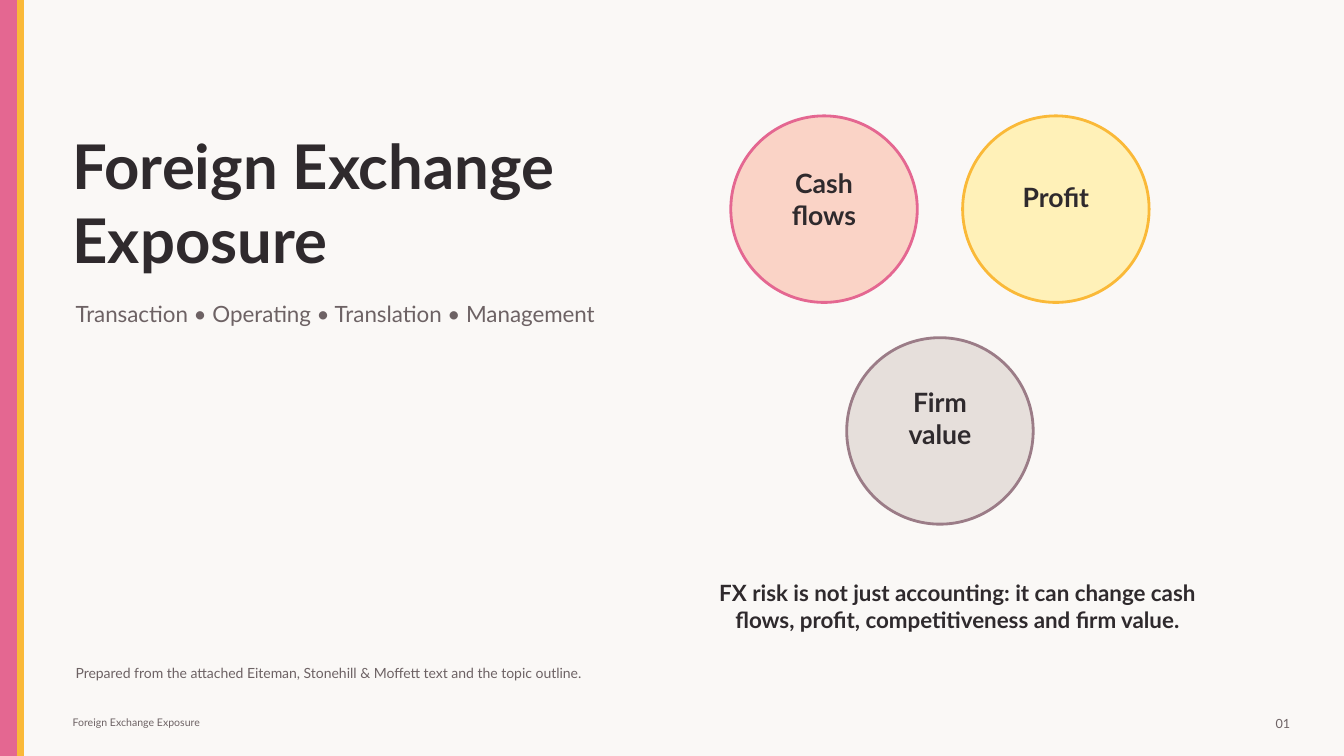
from dataclasses import dataclass

from pptx import Presentation
from pptx.dml.color import RGBColor
from pptx.enum import shapes, text
from pptx.util import Pt


@dataclass(frozen=True)
class Theme:
    font: str = "Lato"
    paper: str = "FAF8F6"
    ink: str = "2F2A2D"
    muted: str = "6D6264"
    pink: str = "E46791"
    pale_pink: str = "FAD3C6"
    amber: str = "FAB938"
    pale_amber: str = "FFF1B8"
    mauve: str = "9B7C87"
    pale_mauve: str = "E6DFDB"
    title: float = 44
    label: float = 19
    body: float = 16
    note: float = 10
    number: float = 9
    footer: float = 7.5


theme = Theme()
WIDTH, HEIGHT = 960, 540
LEFT, CENTER, RIGHT = text.PP_ALIGN.LEFT, text.PP_ALIGN.CENTER, text.PP_ALIGN.RIGHT

# Content: backdrop and edge stripes as left, width, colour
bands = [
    (0, WIDTH, theme.paper),
    (0, 12.96, theme.pink),
    (12.96, 3.6, theme.amber),
]

# Content: lines, (left, top, width, height), size, colour, bold, alignment
texts = [
    (["Foreign Exchange", "Exposure"], (51.84, 90, 468, 108),
     theme.title, theme.ink, True, LEFT),
    (["Transaction • Operating • Translation • Management"], (54, 212.4, 468, 23.04),
     theme.body, theme.muted, False, LEFT),
    (["FX risk is not just accounting: it can change cash flows, profit, "
      "competitiveness and firm value."], (496.8, 414, 374.4, 37.44),
     theme.body, theme.ink, True, CENTER),
    (["Prepared from the attached Eiteman, Stonehill & Moffett text and the topic outline."],
     (54, 471.6, 619.2, 18), theme.note, theme.muted, False, LEFT),
    (["Foreign Exchange Exposure"], (51.84, 509.76, 252, 12.96),
     theme.footer, theme.muted, False, LEFT),
    (["01"], (896.4, 507.6, 25.2, 18), theme.number, theme.muted, False, RIGHT),
]

# Content: label lines, column, row, height of label centre, fill, outline
circles = [
    (["Cash", "flows"], 0, 0, 141.84, theme.pale_pink, theme.pink),
    (["Profit"], 1, 0, 140.4, theme.pale_amber, theme.amber),
    (["Firm", "value"], 0.5, 1, 298.8, theme.pale_mauve, theme.mauve),
]
CIRCLE_LEFT, CIRCLE_TOP, DIAMETER = 522, 82.8, 133.2
COLUMN_STEP, ROW_STEP = 165.6, 158.4
LABEL_INSET, LABEL_WIDTH, LABEL_HEIGHT = 21.6, 90, 36


def add_figure(page, kind, area, fill, outline, weight):
    figure = page.shapes.add_shape(kind, *map(Pt, area))
    figure.shadow.inherit = False
    figure.fill.solid()
    figure.fill.fore_color.rgb = RGBColor.from_string(fill)
    figure.line.color.rgb = RGBColor.from_string(outline)
    figure.line.width = Pt(weight)


def add_text(page, lines, area, size, color, bold, align):
    frame = page.shapes.add_textbox(*map(Pt, area)).text_frame
    frame.word_wrap = True
    frame.vertical_anchor = text.MSO_ANCHOR.MIDDLE
    frame.margin_left = frame.margin_right = frame.margin_top = frame.margin_bottom = 0
    frame.text = "\n".join(lines)
    for para in frame.paragraphs:
        para.alignment = align
        para.font.name = theme.font
        para.font.size = Pt(size)
        para.font.bold = bold
        para.font.color.rgb = RGBColor.from_string(color)


def main():
    deck = Presentation()
    deck.slide_width, deck.slide_height = Pt(WIDTH), Pt(HEIGHT)
    page = deck.slides.add_slide(deck.slide_layouts[6])
    page.background.fill.solid()
    page.background.fill.fore_color.rgb = RGBColor.from_string(theme.paper)

    # Backdrop and stripes
    for left, width, color in bands:
        add_figure(page, shapes.MSO_SHAPE.RECTANGLE, (left, 0, width, HEIGHT), color, color, 1)

    # Circles in a triangle, each with its label
    for lines, column, row, middle, fill, outline in circles:
        left = CIRCLE_LEFT + column * COLUMN_STEP
        top = CIRCLE_TOP + row * ROW_STEP
        add_figure(page, shapes.MSO_SHAPE.OVAL, (left, top, DIAMETER, DIAMETER), fill, outline, 2)
        label_area = (left + LABEL_INSET, middle - LABEL_HEIGHT / 2, LABEL_WIDTH, LABEL_HEIGHT)
        add_text(page, lines, label_area, theme.label, theme.ink, True, CENTER)

    # Title, message and footer
    for item in texts:
        add_text(page, *item)

    deck.save("out.pptx")


if __name__ == "__main__":
    main()
